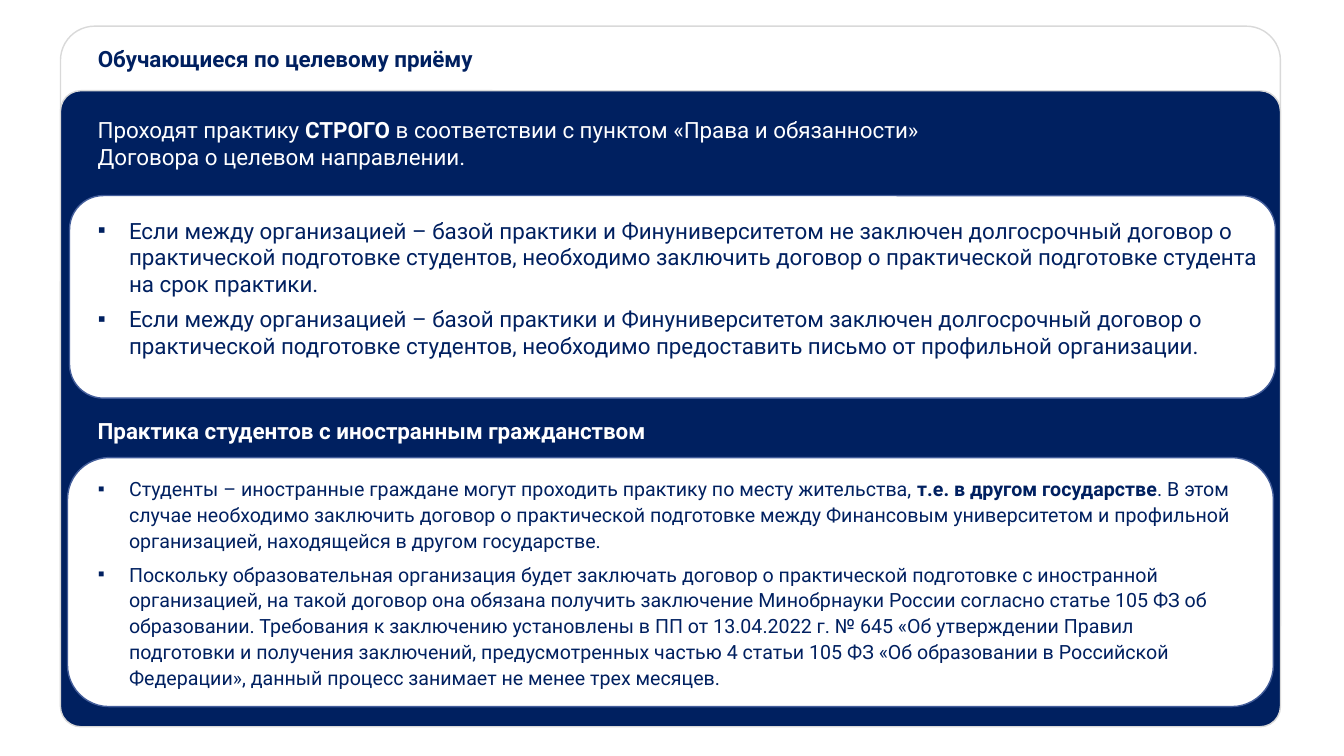
from pptx import Presentation
from pptx.dml.color import RGBColor
from pptx.enum.shapes import MSO_SHAPE
from pptx.enum.text import MSO_ANCHOR, MSO_AUTO_SIZE, PP_ALIGN
from pptx.oxml.ns import qn
from pptx.util import Inches, Pt
from lxml.etree import SubElement

NAVY = RGBColor(0x00, 0x20, 0x60)
WHITE = RGBColor(0xFF, 0xFF, 0xFF)
GREY = RGBColor(0xD9, 0xD9, 0xD9)
BLUE = RGBColor(0x43, 0x5D, 0x9A)
FONT = "Roboto"

# Grid of square cells, ten to the inch; boxes are column, row, columns, rows
CELL = Inches(0.1)
COLS, ROWS = 133.3, 75
LEFT = 8.7
INDENT = 3.1

# box, corner, fill, line
PANELS = [
    ((6, 2.6, 121, 62.7), 0.054, WHITE, GREY),
    ((6, 9, 121, 63.1), 0.032, NAVY, GREY),
    ((6.7, 45.4, 119.6, 24.7), 0.167, WHITE, BLUE),
    ((6.9, 19.4, 119.6, 20.1), 0.167, WHITE, BLUE),
]

# A paragraph is a list of parts; every second part is bold
TITLE = [["", "Обучающиеся по целевому приёму"]]
RULE = [["Проходят практику ", "СТРОГО",
         " в соответствии с пунктом «Права и обязанности» "
         "Договора о целевом направлении."]]
FOREIGN = [["", "Практика студентов с иностранным гражданством"]]
TARGET_LIST = [
    ["Если между организацией – базой практики и Финуниверситетом не заключен "
     "долгосрочный договор о практической подготовке студентов, необходимо "
     "заключить договор о практической подготовке студента на срок практики."],
    ["Если между организацией – базой практики и Финуниверситетом заключен "
     "долгосрочный договор о практической подготовке студентов, необходимо "
     "предоставить письмо от профильной организации."],
]
FOREIGN_LIST = [
    ["Студенты – иностранные граждане могут проходить практику по месту "
     "жительства, ", "т.е. в другом государстве",
     ". В этом случае необходимо заключить договор о практической подготовке "
     "между Финансовым университетом и профильной организацией, находящейся "
     "в другом государстве."],
    ["Поскольку образовательная организация будет заключать договор о "
     "практической подготовке с иностранной организацией, на такой договор она "
     "обязана получить заключение Минобрнауки России согласно статье 105 ФЗ об "
     "образовании. Требования к заключению установлены в ПП от 13.04.2022 г. "
     "№ 645 «Об утверждении Правил подготовки и получения заключений, "
     "предусмотренных частью 4 статьи 105 ФЗ «Об образовании в Российской "
     "Федерации», данный процесс занимает не менее трех месяцев."],
]


def place(shape, box):
    shape.left, shape.top, shape.width, shape.height = (
        round(n * CELL) for n in box)


def add_panel(slide, box, corner, fill, line):
    panel = slide.shapes.add_shape(MSO_SHAPE.ROUNDED_RECTANGLE, 0, 0, 0, 0)
    place(panel, box)
    panel.adjustments[0] = corner
    panel.shadow.inherit = False
    panel.fill.solid()
    panel.fill.fore_color.rgb = fill
    panel.line.color.rgb = line
    panel.line.width = Pt(1)


def add_bullet(para):
    props = para._p.get_or_add_pPr()
    props.set("marL", str(round(INDENT * CELL)))
    props.set("indent", str(-round(INDENT * CELL)))
    SubElement(props, qn("a:buFont")).set("typeface", "Arial")
    SubElement(props, qn("a:buChar")).set("char", "▪")


def write(shape, box, paras, color, size=16, bullet=False, lines=1.0):
    """Move the shape to the box, bring it to the front and fill in its text."""
    place(shape, box)
    tree = shape._element.getparent()
    tree.append(shape._element)
    frame = shape.text_frame
    frame.word_wrap = True
    frame.auto_size = MSO_AUTO_SIZE.NONE
    frame.vertical_anchor = MSO_ANCHOR.TOP
    for i, parts in enumerate(paras):
        para = frame.add_paragraph() if i else frame.paragraphs[0]
        if bullet:
            add_bullet(para)
        para.alignment = PP_ALIGN.LEFT
        para.line_spacing = lines
        para.space_before = Pt(0)
        para.space_after = Pt(5.5 if bullet else 12)
        for j, part in enumerate(parts):
            if not part:
                continue
            run = para.add_run()
            run.text = part
            font = run.font
            font.name, font.size, font.bold = FONT, Pt(size), j % 2 == 1
            font.color.rgb = color


def main():
    deck = Presentation()
    deck.slide_width = round(COLS * CELL)
    deck.slide_height = ROWS * CELL
    slide = deck.slides.add_slide(deck.slide_layouts.get_by_name("Two Content"))
    title, target, foreign = slide.placeholders
    for panel in PANELS:
        add_panel(slide, *panel)

    write(title, (LEFT, 4, 40.6, 3.7), TITLE, NAVY)
    for row, wide, high, paras in [(11, 90.1, 6.4, RULE),
                                   (40.9, 59.5, 3.7, FOREIGN)]:
        label = slide.shapes.add_textbox(0, 0, 0, 0)
        write(label, (LEFT, row, wide, high), paras, WHITE)
    write(target, (LEFT, 21, 117.6, 19.2), TARGET_LIST, NAVY, bullet=True)
    write(foreign, (LEFT, 46.6, 115.6, 28.4), FOREIGN_LIST, NAVY,
          size=14, bullet=True, lines=1.1)
    deck.save("out.pptx")


if __name__ == "__main__":
    main()
